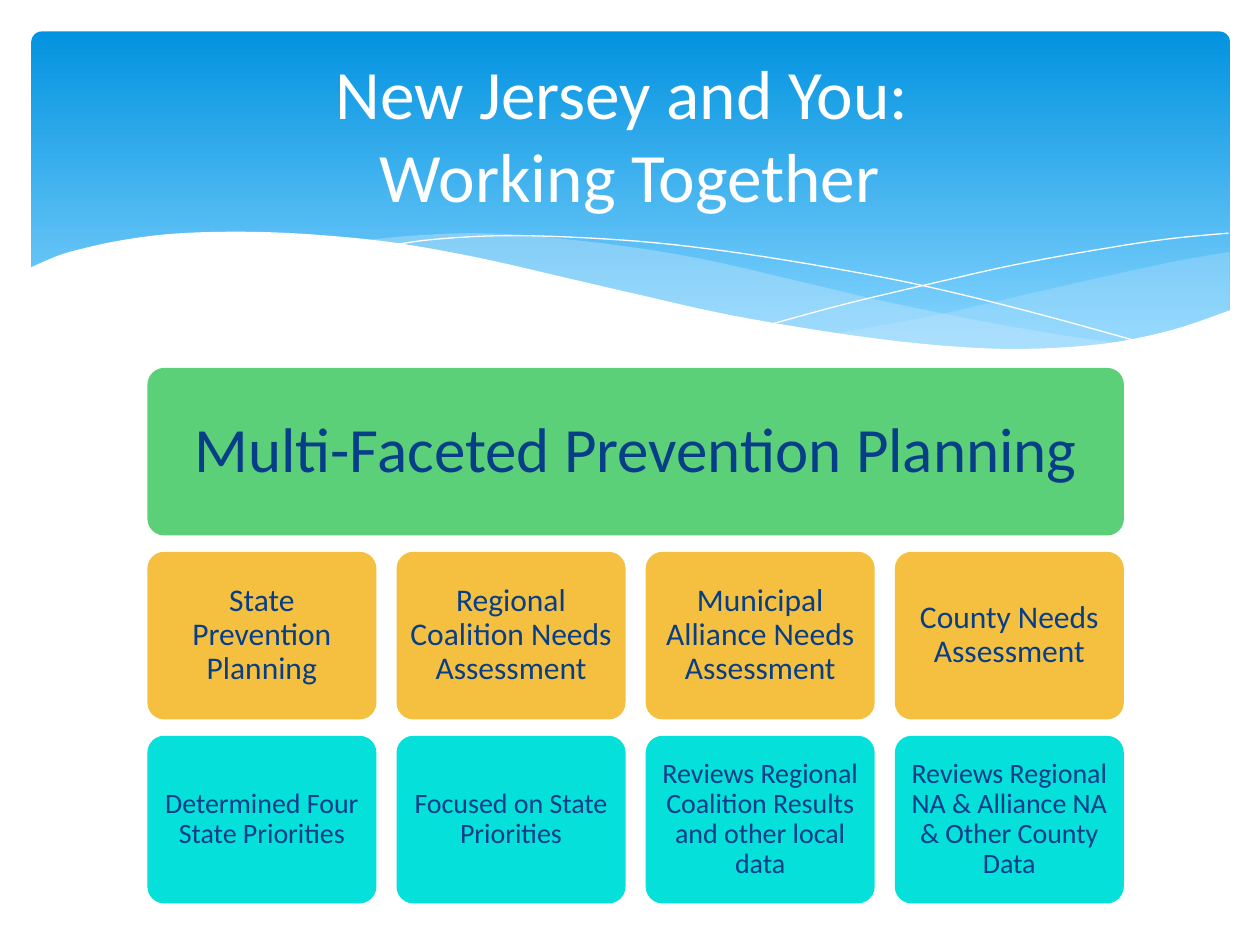
from lxml import etree
from pptx import Presentation
from pptx import util as u
from pptx.dml.color import RGBColor
from pptx.enum import shapes, text
from pptx.oxml.ns import qn

PX = 9144  # 100 px to the inch
FONT = "Calibri"
WHITE = RGBColor(0xFF, 0xFF, 0xFF)
NAVY = RGBColor(0x07, 0x3E, 0x87)
SKY_TOP = RGBColor(0x02, 0x93, 0xE0)
SKY_BOTTOM = RGBColor(0x83, 0xD3, 0xFE)
MIST = RGBColor(0xC6, 0xE7, 0xFC)
GREEN = RGBColor(0x5B, 0xD0, 0x78)
AMBER = RGBColor(0xF5, 0xC0, 0x40)
AQUA = RGBColor(0x05, 0xE0, 0xDB)

TITLE = "New Jersey and You: \vWorking Together"
# labels, fill, text size, inset
ROWS = [
    (["Multi-Faceted Prevention Planning"], GREEN, 36, 15),
    (["State Prevention Planning", "Regional Coalition Needs Assessment",
      "Municipal Alliance Needs Assessment", "County Needs Assessment"], AMBER, 18, 7),
    (["Determined Four State Priorities", "Focused on State Priorities",
      "Reviews Regional Coalition Results and other local data",
      "Reviews Regional NA & Alliance NA & Other County Data"], AQUA, 16, 7),
]
GRID_LEFT, GRID_TOP, GRID_WIDTH = 117, 292, 775
CARD_HEIGHT, ROW_PITCH, COLUMN_GAP = 133, 146, 16

# Each wave is a list of smooth curves joined by straight lines.
RIGHT_MIST = [
    [(976, 200), (935, 207), (861, 223), (779, 242), (729, 253), (661, 265)],
    [(661, 265), (705, 271), (757, 276), (814, 278), (872, 274), (928, 263), (976, 247)],
]
LEFT_MIST = [
    [(893, 273), (837, 265), (775, 254), (706, 240), (629, 222), (569, 208),
     (514, 198), (442, 189), (380, 185), (328, 187), (286, 191)],
    [(286, 191), (342, 199), (404, 211), (449, 222), (530, 240), (601, 255),
     (665, 266), (722, 274), (773, 277), (818, 278), (857, 277), (893, 273)],
]
LONG_LINE = [[(309, 195), (344, 190), (401, 187), (469, 189), (533, 194), (608, 204),
              (695, 219), (760, 233), (831, 251), (907, 272)]]
SHORT_LINE = [[(613, 257), (672, 241), (748, 223), (806, 210), (866, 199),
               (924, 190), (975, 185)]]
WHITE_WAVE = [
    [(977, 246), (930, 262), (875, 273), (809, 277), (744, 274), (668, 265),
     (579, 250), (503, 233), (447, 220), (391, 207), (340, 197), (292, 190),
     (230, 185), (177, 184), (132, 186), (95, 191), (67, 197), (46, 203),
     (23, 213)],
    [(23, 329)], [(977, 329)],
]


def smooth(points, steps=5):
    """Return points along a Catmull-Rom curve through the given points."""
    padded = [points[0], *points, points[-1]]
    curve = [points[0]]
    for a, b, c, d in zip(padded, padded[1:], padded[2:], padded[3:]):
        for step in range(1, steps + 1):
            t = step / steps
            curve.append(tuple(
                (2 * q + (r - p) * t + (2 * p - 5 * q + 4 * r - s) * t ** 2
                 + (3 * q - p - 3 * r + s) * t ** 3) / 2
                for p, q, r, s in zip(a, b, c, d)))
    return curve


def add_wave(page, curves, fill=None, opacity=100):
    """Draw a filled wave, or a white hairline when there is no fill."""
    points = [(round(x * PX), round(y * PX)) for curve in curves for x, y in smooth(curve)]
    builder = page.shapes.build_freeform(*points[0], scale=1.0)
    builder.add_line_segments(points[1:], close=fill is not None)
    wave = builder.convert_to_shape()
    wave.shadow.inherit = False
    if fill is None:
        wave.fill.background()
        wave.line.color.rgb = WHITE
        wave.line.width = u.Pt(0)
        return
    wave.line.fill.background()
    wave.fill.solid()
    wave.fill.fore_color.rgb = fill
    if opacity < 100:
        color = wave.fill._xPr.find(".//" + qn("a:srgbClr"))
        etree.SubElement(color, qn("a:alpha"), val=str(opacity * 1000))


def add_round_box(page, left, top, width, height, corner):
    box = page.shapes.add_shape(shapes.MSO_SHAPE.ROUNDED_RECTANGLE,
                                *(round(n * PX) for n in (left, top, width, height)))
    box.adjustments[0] = corner
    box.shadow.inherit = False
    box.line.fill.background()
    return box


def write(box, words, size, color):
    frame = box.text_frame
    frame.word_wrap = True
    frame.vertical_anchor = text.MSO_ANCHOR.MIDDLE
    frame.text = words
    para = frame.paragraphs[0]
    para.alignment = text.PP_ALIGN.CENTER
    for span in para.runs:
        span.font.name = FONT
        span.font.size = u.Pt(size)
        span.font.color.rgb = color
    return frame


def add_banner(page):
    sky = add_round_box(page, 25, 25, 951, 270, 0.03)
    sky.fill.gradient()
    sky.fill.gradient_angle = 270
    for stop, position, color in zip(sky.fill.gradient_stops, (0, 0.9), (SKY_TOP, SKY_BOTTOM)):
        stop.position = position
        stop.color.rgb = color
    add_wave(page, RIGHT_MIST, MIST, 29)
    add_wave(page, LEFT_MIST, MIST, 40)
    add_wave(page, LONG_LINE)
    add_wave(page, SHORT_LINE)
    add_wave(page, WHITE_WAVE, WHITE)
    title = page.shapes.add_textbox(50 * PX, 37 * PX, 900 * PX, 137 * PX)
    write(title, TITLE, 39.6, WHITE)


def add_cards(page):
    for row, (labels, fill, size, inset) in enumerate(ROWS):
        width = (GRID_WIDTH + COLUMN_GAP) / len(labels) - COLUMN_GAP
        for column, label in enumerate(labels):
            card = add_round_box(page, GRID_LEFT + column * (width + COLUMN_GAP),
                                 GRID_TOP + row * ROW_PITCH, width, CARD_HEIGHT, 0.1)
            card.fill.solid()
            card.fill.fore_color.rgb = fill
            frame = write(card, label, size, NAVY)
            frame.paragraphs[0].line_spacing = 0.9
            frame.margin_left = frame.margin_right = inset * PX
            frame.margin_top = frame.margin_bottom = inset * PX


def main():
    deck = Presentation()
    deck.slide_width, deck.slide_height = 1000 * PX, 750 * PX
    page = deck.slides.add_slide(deck.slide_layouts[6])
    add_banner(page)
    add_cards(page)
    deck.save("out.pptx")


if __name__ == "__main__":
    main()
